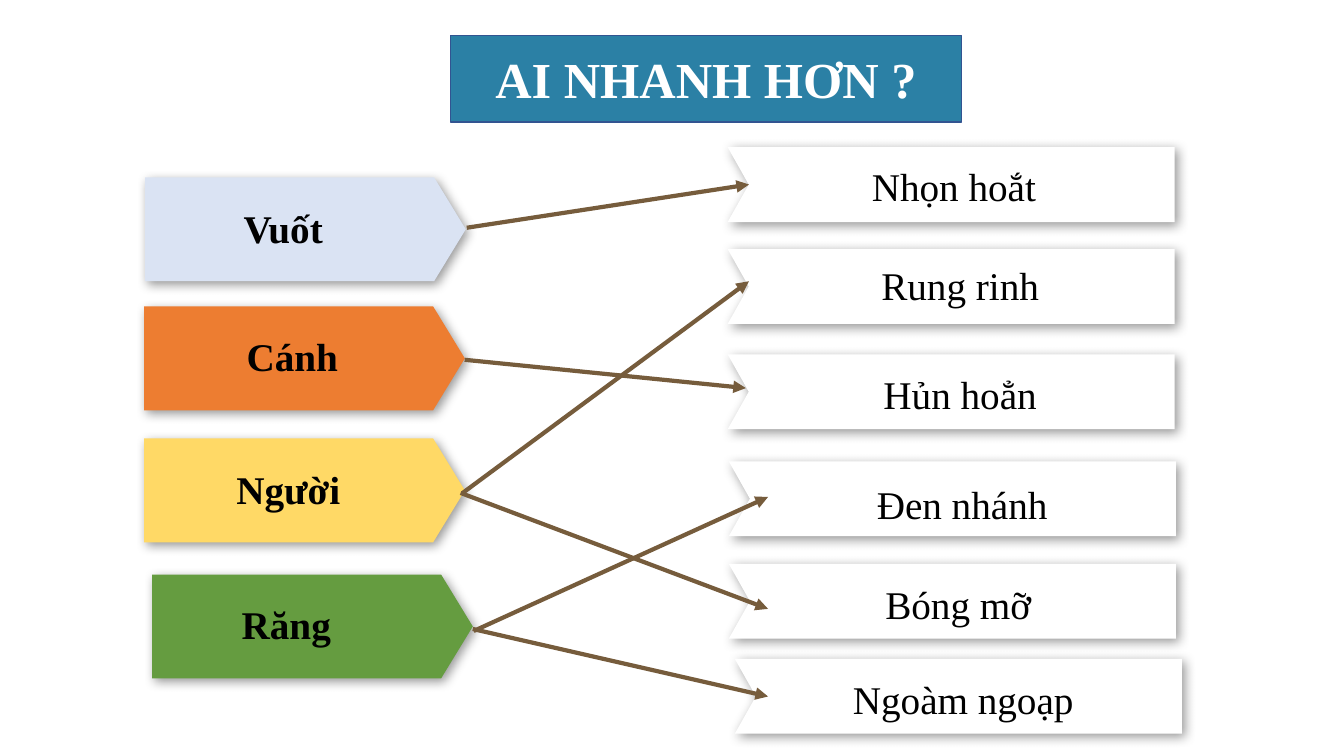
from lxml.etree import SubElement
from pptx import Presentation
from pptx.dml.color import RGBColor
from pptx.enum.shapes import MSO_CONNECTOR, MSO_SHAPE
from pptx.enum.text import MSO_ANCHOR, MSO_AUTO_SIZE, PP_ALIGN
from pptx.oxml.ns import qn
from pptx.util import Pt

TITLE = "AI NHANH HƠN ?"
TITLE_BOX = (321.8, 25.2, 365, 61.9)

# word, tag left and top, tag colour, label box, line spacing, label filled
WORDS = [
    ("Vuốt", (103.7, 126.7), "DAE3F3", (103, 136, 198.7, 44.6), 1.2, False),
    ("Cánh", (103, 218.9), "ED7D31", (113, 234, 191.5, 41), 1, True),
    ("Người", (103, 313.2), "FFD966", (110.2, 329, 191.5, 41), 1, True),
    ("Răng", (108.7, 410.4), "659C40", (108.7, 425.5, 191.5, 41), 1, True),
]
# description, ribbon left and top, label left and top, alignment
DESCRIPTIONS = [
    ("Nhọn hoắt", (519.8, 105.1), (615.6, 108), PP_ALIGN.LEFT),
    ("Rung rinh", (519.8, 177.9), (532.8, 178.6), PP_ALIGN.CENTER),
    ("Hủn hoẳn", (519.8, 253.1), (532.8, 256.3), PP_ALIGN.CENTER),
    ("Đen nhánh", (520.6, 329.5), (534.2, 334.8), PP_ALIGN.CENTER),
    ("Bóng mỡ", (520.6, 402.7), (531.4, 406.1), PP_ALIGN.CENTER),
    ("Ngoàm ngoạp", (524.9, 470.6), (535, 473.8), PP_ALIGN.CENTER),
]
# start and end of each matching arrow
MATCHES = [
    ((333.4, 162.7), (535, 131.8)),
    ((331.9, 257), (532.8, 277.2)),
    ((330.5, 352.1), (535, 200.9)),
    ((329, 352.1), (548.6, 434.9)),
    ((338.4, 450.7), (548.6, 355)),
    ((337.7, 449.3), (548.6, 497.5)),
]

TAG_SIZE = (229, 74.2)
TAG_POINT = 0.305
RIBBON_WIDTH, RIBBON_HEIGHT, RIBBON_NOTCH = 319.3, 53.5, 15.1
RIBBON_LABEL_SIZE = (306, 43.2)
RIBBON_SPACING = 1.14

THEME = {
    "font": "Times New Roman",
    "title_size": 36,
    "label_size": 28,
    "title_fill": "2B80A5",
    "title_line": "325491",
    "title_text": "FFFFFF",
    "text": "000000",
    "ribbon": "FFFFFF",
    "arrow": "765C3C",
    "shadow": "000000",
}


def points(values):
    return [Pt(value) for value in values]


def paint(shape, colour):
    shape.shadow.inherit = False
    shape.fill.solid()
    shape.fill.fore_color.rgb = RGBColor.from_string(colour)
    shape.line.fill.background()


def cast_shadow(shape):
    """Add a soft shadow down and to the right of a painted shape."""
    effects = shape.element.spPr.find(qn("a:effectLst"))
    shadow = SubElement(effects, qn("a:outerShdw"), blurRad=str(Pt(8)),
                        dist=str(Pt(3)), dir="2700000", algn="tl", rotWithShape="0")
    colour = SubElement(shadow, qn("a:srgbClr"), val=THEME["shadow"])
    SubElement(colour, qn("a:alpha"), val="40000")


def write(shape, wording, size, colour, bold, align=PP_ALIGN.CENTER, spacing=1):
    frame = shape.text_frame
    frame.word_wrap = True
    frame.text = wording
    paragraph = frame.paragraphs[0]
    paragraph.alignment = align
    paragraph.line_spacing = spacing
    font = paragraph.runs[0].font
    font.name = THEME["font"]
    font.size = Pt(size)
    font.bold = bold
    font.color.rgb = RGBColor.from_string(colour)


def add_label(shapes, wording, box, bold, align, spacing):
    label = shapes.add_textbox(*points(box))
    write(label, wording, THEME["label_size"], THEME["text"], bold, align, spacing)
    label.text_frame.auto_size = MSO_AUTO_SIZE.SHAPE_TO_FIT_TEXT
    return label


def add_title(shapes):
    title = shapes.add_shape(MSO_SHAPE.RECTANGLE, *points(TITLE_BOX))
    paint(title, THEME["title_fill"])
    title.line.color.rgb = RGBColor.from_string(THEME["title_line"])
    title.line.width = Pt(1)
    write(title, TITLE, THEME["title_size"], THEME["title_text"], True)
    title.text_frame.vertical_anchor = MSO_ANCHOR.MIDDLE


def add_word(shapes, word, corner, colour, label_box, spacing, filled):
    group = shapes.add_group_shape().shapes
    tag = group.add_shape(MSO_SHAPE.PENTAGON, *points(corner + TAG_SIZE))
    tag.adjustments[0] = TAG_POINT
    paint(tag, colour)
    cast_shadow(tag)
    label = add_label(group, word, label_box, True, PP_ALIGN.CENTER, spacing)
    if filled:
        paint(label, colour)


def add_description(shapes, description, corner, label_corner, align):
    group = shapes.add_group_shape().shapes
    left, top = corner
    right, bottom = left + RIBBON_WIDTH, top + RIBBON_HEIGHT
    outline = group.build_freeform(Pt(left), Pt(top))
    outline.add_line_segments([
        points(vertex) for vertex in (
            (right, top), (right, bottom), (left, bottom),
            (left + RIBBON_NOTCH, top + RIBBON_HEIGHT / 2))
    ])
    ribbon = outline.convert_to_shape()
    paint(ribbon, THEME["ribbon"])
    cast_shadow(ribbon)
    add_label(group, description, label_corner + RIBBON_LABEL_SIZE, False,
              align, RIBBON_SPACING)


def add_arrow(shapes, start, end):
    arrow = shapes.add_connector(MSO_CONNECTOR.STRAIGHT, *points(start + end))
    arrow.line.color.rgb = RGBColor.from_string(THEME["arrow"])
    arrow.line.width = Pt(3)
    properties = arrow.element.spPr
    SubElement(properties.find(qn("a:ln")), qn("a:tailEnd"), type="triangle")
    SubElement(properties, qn("a:effectLst"))


def main():
    deck = Presentation()
    deck.slide_width, deck.slide_height = Pt(960), Pt(540)
    shapes = deck.slides.add_slide(deck.slide_layouts[6]).shapes
    add_title(shapes)
    for word in WORDS:
        add_word(shapes, *word)
    for description in DESCRIPTIONS:
        add_description(shapes, *description)
    for match in MATCHES:
        add_arrow(shapes, *match)
    deck.save("out.pptx")


if __name__ == "__main__":
    main()
